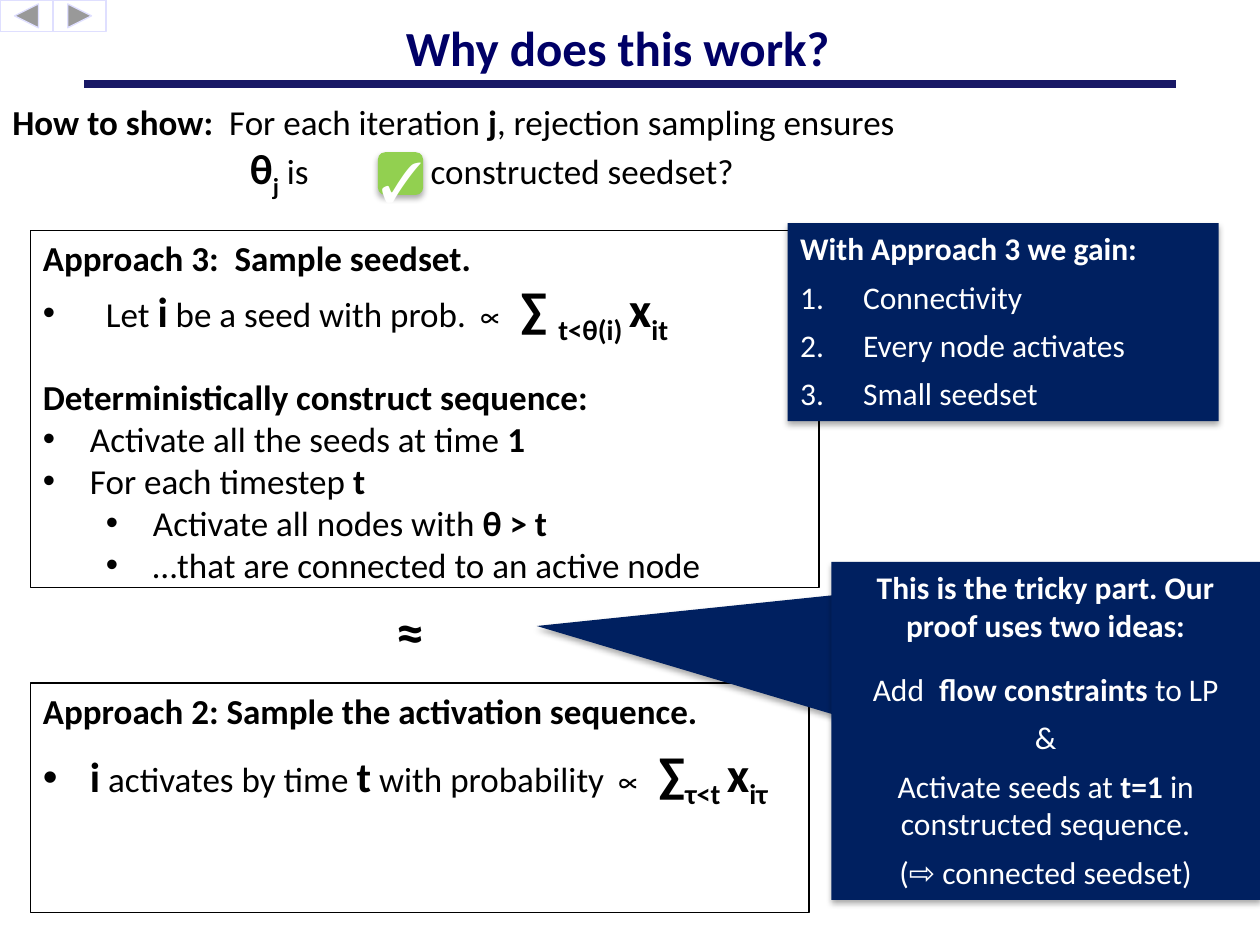
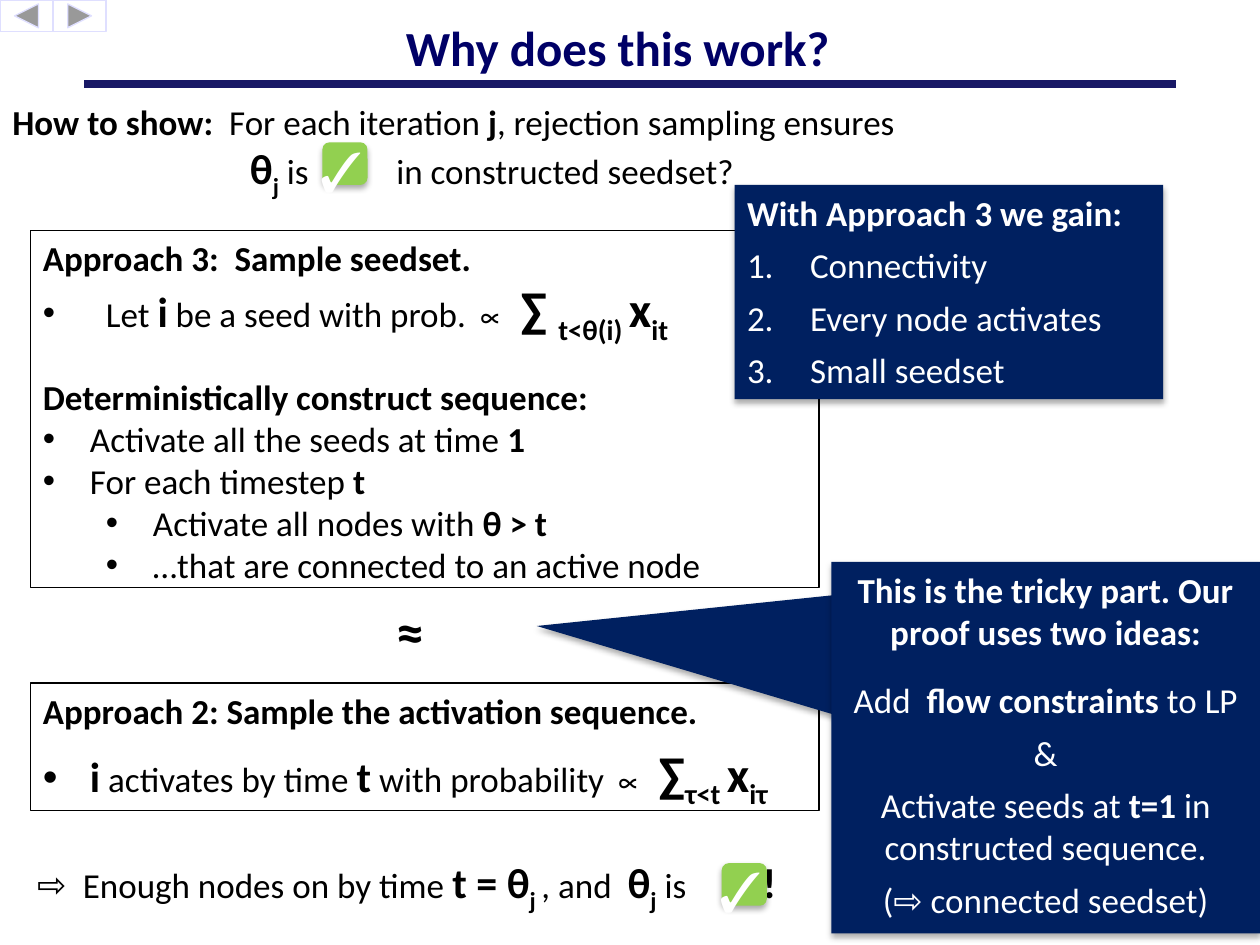
from lxml.etree import SubElement
from pptx import Presentation
from pptx.dml.color import RGBColor
from pptx.enum.shapes import MSO_CONNECTOR, MSO_SHAPE
from pptx.enum.text import MSO_ANCHOR, MSO_AUTO_SIZE, PP_ALIGN
from pptx.oxml.ns import qn
from pptx.util import Cm, Pt

COLORS = {"title": "000066", "rule": "191966", "edge": "DFDFFF", "navy": "002060",
          "green": "92D050", "black": "000000", "white": "FFFFFF"}
FONT, SYMBOL_FONT = "Calibri", "Times New Roman"

# Run styles; a run without a size takes the size of its text frame.
# Spacing is extra width after each character, in points.
STYLES = {
    "plain": {"bold": False},
    "bold": {"bold": True},
    "var": {"bold": True, "size": 24},
    "varsub": {"bold": True, "size": 24, "sub": True},
    "sum": {"bold": True, "size": 28},
    "sumsub": {"bold": True, "size": 28, "sub": True},
    "symbol": {"bold": False, "name": SYMBOL_FONT},
    "mark": {"bold": True, "size": 32},
    "tick": {"bold": True, "size": 32, "name": SYMBOL_FONT},
    "wide": {"bold": False, "spacing": 4.5},
    "question gap": {"bold": False, "spacing": 45.5},
    "conclusion gap": {"bold": False, "spacing": 39},
}
BULLET = {"bullet": "•", "left": 0.95, "hang": 0.95}
SUB_BULLET = {"bullet": "•", "left": 2.22, "hang": 0.95, "level": 1}
WIDE_BULLET = {"bullet": "•", "left": 1.27, "hang": 1.27}
ARROW = {"bullet": "⇨", "left": 0.92, "hang": 0.92}
NUMBER = {"bullet": "1.", "left": 1.27, "hang": 1.27, "before": 6}
CENTER = {"align": PP_ALIGN.CENTER, "before": 6}

# Each paragraph: (format, [(text, style), ...])
TITLE = [({"align": PP_ALIGN.CENTER}, [("Why does this work?", "bold")])]
QUESTION = [
    ({}, [("How to show:", "bold"), (" ", "wide"), ("For each iteration ", "plain"),
          ("j", "bold"), (", rejection sampling ensures", "plain")]),
    ({"left": 4.79}, [("θ", "var"), ("j", "varsub"), (" is", "plain"),
                      (" ", "question gap"), ("in constructed seedset?", "plain")]),
]
APPROACH_3 = [
    ({}, [("Approach 3:", "bold"), (" ", "wide"), ("Sample seedset.", "bold")]),
    (WIDE_BULLET, [("Let ", "plain"), ("i", "var"), (" be a seed with prob. ", "plain"),
                   ("∝", "symbol"), (" ∑ ", "sum"), ("t<θ(i) ", "sumsub"),
                   ("x", "sum"), ("it", "sumsub")]),
    ({"before": 17}, [("Deterministically construct sequence:", "bold")]),
    (BULLET, [("Activate all the seeds at time ", "plain"), ("1", "bold")]),
    (BULLET, [("For each timestep ", "plain"), ("t", "bold")]),
    (SUB_BULLET, [("Activate all nodes with ", "plain"), ("θ > t", "bold")]),
    (SUB_BULLET, [("…that are connected to an active node", "plain")]),
]
APPROACH_2 = [
    ({}, [("Approach 2: Sample the activation sequence.", "bold")]),
    ({**BULLET, "before": 7}, [
        ("i", "var"), (" activates by time ", "plain"), ("t", "var"),
        (" with probability ", "plain"), ("∝", "symbol"), (" ∑", "sum"),
        ("τ<t ", "sumsub"), ("x", "sum"), ("iτ", "sumsub")]),
]
CONCLUSION = [
    (ARROW, [("Enough nodes on by time ", "plain"), ("t = θ", "var"), ("j ", "varsub"),
             (", and", "plain"), (" ", "wide"), ("θ", "var"), ("j", "varsub"),
             (" is", "plain"), (" ", "conclusion gap"), ("!", "var")]),
]
TRICKY_PART = [
    (CENTER, [("This is the tricky part. Our proof uses two ideas:", "bold")]),
    ({**CENTER, "before": 15}, [("Add", "plain"), (" ", "wide"),
                                ("flow constraints ", "bold"), ("to LP", "plain")]),
    (CENTER, [("&", "plain")]),
    (CENTER, [("Activate seeds at ", "plain"), ("t=1", "bold"),
              (" in constructed sequence.", "plain")]),
    (CENTER, [("(⇨ connected seedset)", "plain")]),
]
GAINS = [
    ({"before": 6}, [("With Approach 3 we gain:", "bold")]),
    *[(NUMBER, [(gain, "plain")])
      for gain in ("Connectivity", "Every node activates", "Small seedset")],
]
ALMOST_EQUAL = [({"align": PP_ALIGN.CENTER}, [("≈", "mark")])]
TICK = [({}, [("✓", "tick")])]

# What differs between the slides: boxes are left, top, width, height in cm;
# a check is left, top of its square and the shift of its tick
SLIDES = [
    {"approach_2": (0.61, 13.77, 15.7, 4.62), "size": 18,
     "tricky": (16.76, 11.33, 8.64, 6.81), "gains": (15.88, 4.5, 8.69, 3.99),
     "checks": [(7.62, 3.07, -0.2)], "conclusion": None},
    {"approach_2": (0.61, 13.77, 15.9, 2.57), "size": 20,
     "tricky": (16.76, 11.33, 8.64, 7.49), "gains": (14.81, 3.73, 8.64, 4.32),
     "checks": [(6.5, 2.87, -0.3), (14.55, 17.4, -0.3)],
     "conclusion": (0.5, 17.15, 16, 1.27)},
]


def rgb(name):
    return RGBColor.from_string(COLORS[name])


def cm(box):
    return [Cm(v) for v in box]


def format_paragraph(p, fmt):
    for key, value in {"alignment": fmt.get("align", PP_ALIGN.LEFT),
                       "level": fmt.get("level", 0), "space_after": Pt(0),
                       "space_before": Pt(fmt.get("before", 0))}.items():
        setattr(p, key, value)
    pPr = p._p.get_or_add_pPr()
    pPr.set("marL", str(Cm(fmt.get("left", 0))))
    pPr.set("indent", str(-Cm(fmt.get("hang", 0))))
    bullet = fmt.get("bullet")
    if bullet == "1.":
        SubElement(pPr, qn("a:buFont"), typeface="+mj-lt")
        SubElement(pPr, qn("a:buAutoNum"), type="arabicPeriod")
    elif bullet:
        SubElement(pPr, qn("a:buFont"), typeface="Arial")
        SubElement(pPr, qn("a:buChar"), char=bullet)
    else:
        SubElement(pPr, qn("a:buNone"))


def write(sp, paragraphs, size=20, color="black", anchor=MSO_ANCHOR.TOP):
    tf = sp.text_frame
    for key, value in {"word_wrap": True, "auto_size": MSO_AUTO_SIZE.NONE,
                       "vertical_anchor": anchor}.items():
        setattr(tf, key, value)
    for i, (fmt, runs) in enumerate(paragraphs):
        p = tf.add_paragraph() if i else tf.paragraphs[0]
        format_paragraph(p, fmt)
        for text, style in runs:
            look = STYLES[style]
            r = p.add_run()
            r.text = text
            for key, value in {"name": look.get("name", FONT), "bold": look["bold"],
                               "size": Pt(look.get("size", size))}.items():
                setattr(r.font, key, value)
            r.font.color.rgb = rgb(color)
            rPr = r._r.get_or_add_rPr()
            if look.get("sub"):
                rPr.set("baseline", "-25000")
            if "spacing" in look:
                rPr.set("spc", str(int(look["spacing"] * 100)))


def place(sp, box):
    sp.left, sp.top, sp.width, sp.height = cm(box)


def add_text(s, box, paragraphs, **look):
    write(s.shapes.add_textbox(*cm(box)), paragraphs, **look)


def add_filled(s, kind, box, fill, edge=None):
    sp = s.shapes.add_shape(kind, *cm(box))
    sp.shadow.inherit = False
    sp.fill.solid()
    sp.fill.fore_color.rgb = rgb(fill)
    if edge:
        sp.line.color.rgb = rgb(edge)
        sp.line.width = Pt(0.75)
    else:
        sp.line.fill.background()
    return sp


def add_raised(s, kind, box, fill):
    """Add a filled shape with a soft shadow below it."""
    sp = add_filled(s, kind, box, fill)
    effects = sp._element.spPr.find(qn("a:effectLst"))
    shadow = SubElement(effects, qn("a:outerShdw"), blurRad=str(Pt(3.5)),
                        dist=str(Pt(2.2)), dir="5400000", rotWithShape="0")
    color = SubElement(shadow, qn("a:srgbClr"), val=COLORS["black"])
    SubElement(color, qn("a:alpha"), val="32000")
    return sp


def add_frame(s):
    """Add the navigation buttons, the rule and the title."""
    width = 1.07
    for i, kind in enumerate((MSO_SHAPE.ACTION_BUTTON_BACK_OR_PREVIOUS,
                              MSO_SHAPE.ACTION_BUTTON_FORWARD_OR_NEXT)):
        add_filled(s, kind, (i * width, 0, width, 0.64), "white", "edge")
    rule = s.shapes.add_connector(MSO_CONNECTOR.STRAIGHT, *cm((1.7, 1.7, 23.7, 1.7)))
    rule.line.color.rgb = rgb("rule")
    rule.line.width = Pt(4.5)
    SubElement(rule._element.spPr, qn("a:effectLst"))
    place(s.shapes.title, (0, 0, 24.9, 1.9))
    write(s.shapes.title, TITLE, size=28, color="title", anchor=MSO_ANCHOR.MIDDLE)


def add_approach(sp, box, paragraphs):
    place(sp, box)
    sp.line.color.rgb = rgb("black")
    sp.line.width = Pt(0.75)
    write(sp, paragraphs)


def add_check(s, left, top, shift):
    add_raised(s, MSO_SHAPE.ROUNDED_RECTANGLE, (left, top, 0.91, 0.86), "green")
    add_text(s, (left + shift, top - 0.25, 1.12, 1.63), TICK, color="white")


def add_panel(s, box, paragraphs, size):
    sp = add_raised(s, MSO_SHAPE.RECTANGLE, box, "navy")
    write(sp, paragraphs, size=size, color="white")


def build_slide(prs, part):
    s = prs.slides.add_slide(prs.slide_layouts.get_by_name("Two Content"))
    add_frame(s)
    add_text(s, (0, 1.91, 25.4, 2.13), QUESTION)
    add_approach(s.placeholders[1], (0.61, 4.65, 15.9, 7.19), APPROACH_3)
    add_text(s, (7.57, 11.91, 1.4, 1.63), ALMOST_EQUAL)
    add_approach(s.placeholders[2], part["approach_2"], APPROACH_2)
    if part["conclusion"]:
        add_text(s, part["conclusion"], CONCLUSION)
    for check in part["checks"]:
        add_check(s, *check)
    pointer = add_raised(s, MSO_SHAPE.ISOSCELES_TRIANGLE, (11.07, 10.92, 9.14, 3.07), "navy")
    pointer.adjustments[0] = 0.81
    pointer.rotation = 16.6
    add_panel(s, part["tricky"], TRICKY_PART, part["size"])
    add_panel(s, part["gains"], GAINS, part["size"])


def main():
    prs = Presentation()
    prs.slide_width, prs.slide_height = Cm(25.4), Cm(19.05)
    for part in SLIDES:
        build_slide(prs, part)
    prs.save("out.pptx")


if __name__ == "__main__":
    main()
